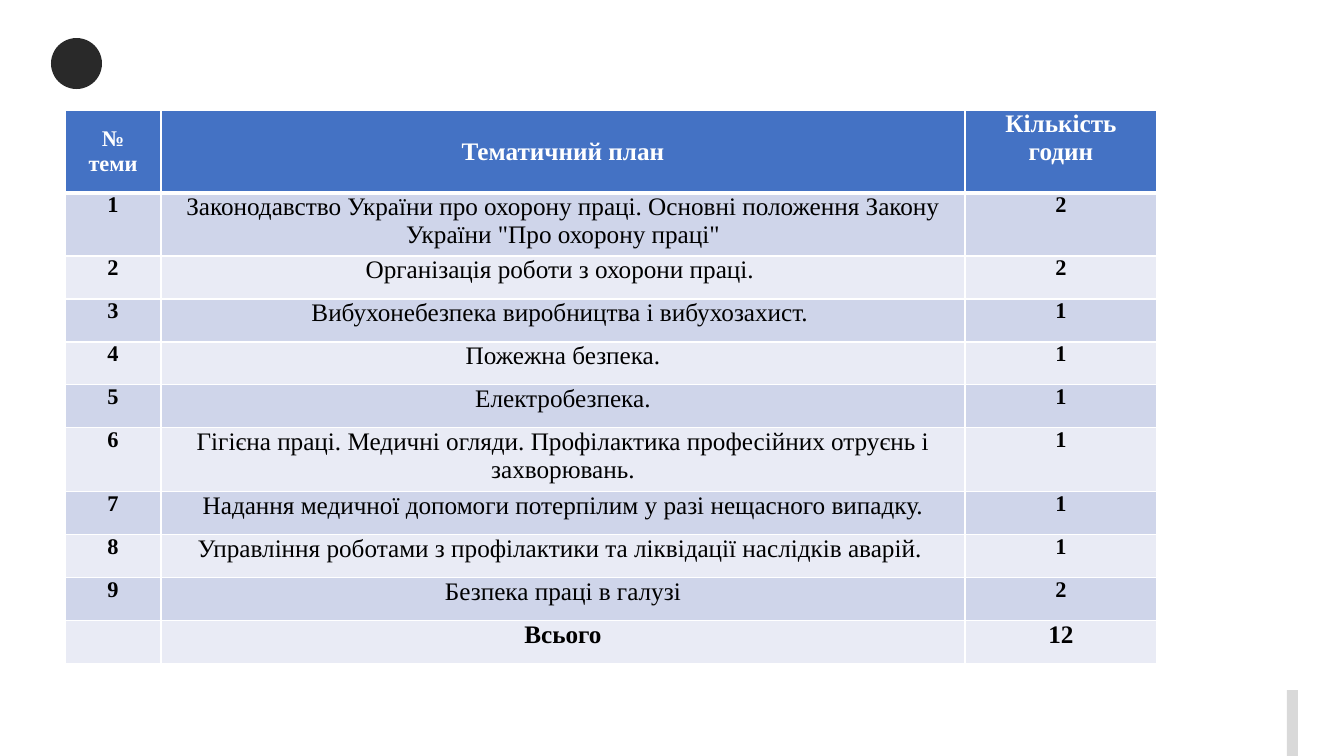
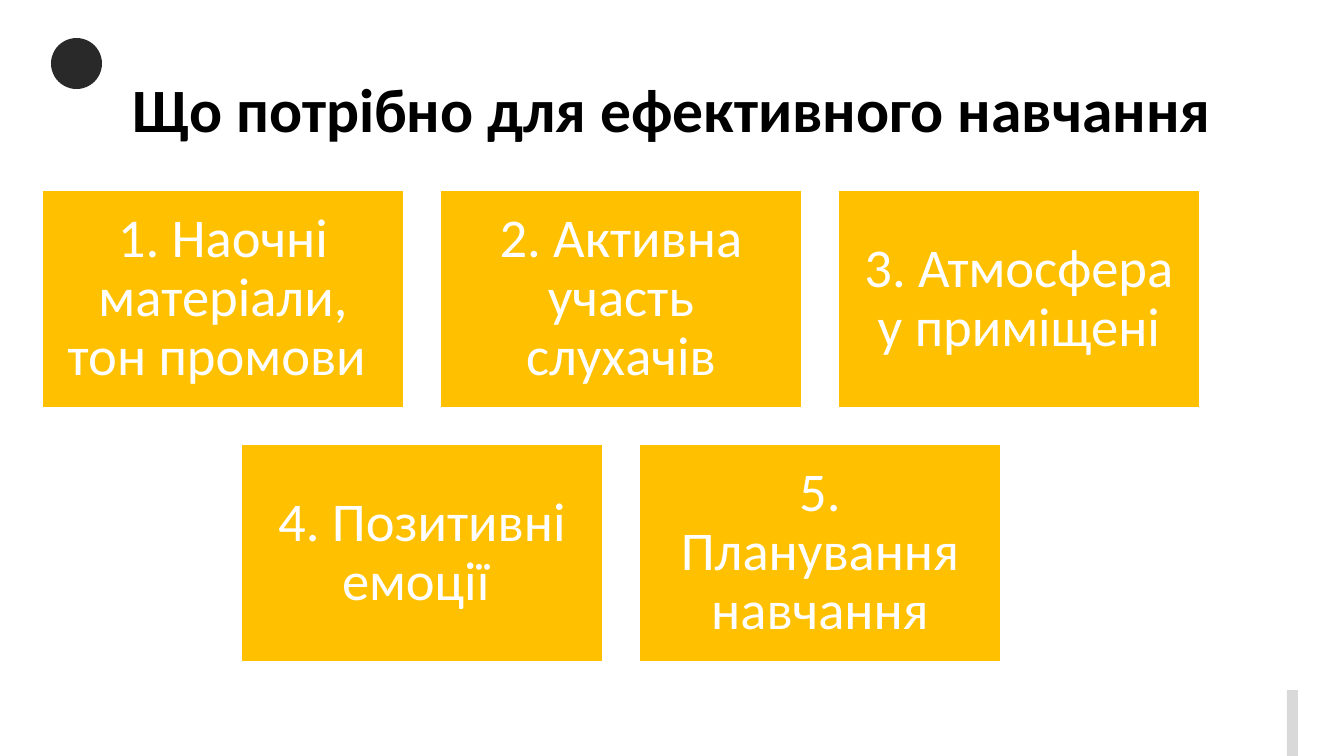
import dataclasses

import lxml.etree
import pptx
import pptx.dml.color
import pptx.enum.shapes
import pptx.enum.text
import pptx.oxml.ns
import pptx.shapes.autoshape
import pptx.slide
import pptx.table
import pptx.text.text
import pptx.util

SLIDE_W, SLIDE_H = 1344, 756
EMU_PER_PX = 12192000 / SLIDE_W
TITLE_ONLY, BLANK = 5, 6

WHITE, BLACK = "FFFFFF", "000000"
DARK, GREY = "292929", "D9D9D9"
HEADER_BLUE, BANDS = "4472C4", ("E9EBF5", "CFD5EA")
AMBER = "FFC000"
SANS, SERIF = "Calibri", "Times New Roman"

MIDDLE = pptx.enum.text.MSO_ANCHOR.MIDDLE
TOP = pptx.enum.text.MSO_ANCHOR.TOP
RECT = pptx.enum.shapes.MSO_SHAPE.RECTANGLE
OVAL = pptx.enum.shapes.MSO_SHAPE.OVAL


@dataclasses.dataclass(frozen=True)
class Box:
    x: int
    y: int
    w: int
    h: int


@dataclasses.dataclass(frozen=True)
class Topic:
    number: str
    name: str
    hours: str
    height: int = 43


TITLE_BOX = Box(93, 40, 1159, 146)
CORNER_DOT = Box(51, 38, 51, 51)
EDGE_BAR = Box(1287, 690, 11, 66)

TABLE_X, TABLE_Y, HEADER_H = 65, 110, 83
COLUMNS = (96, 804, 192)
HEADER = (
    (("№", "теми"), 16, MIDDLE),
    (("Тематичний план",), 18, MIDDLE),
    (("Кількість", "годин"), 18, TOP),
)
TOPICS = (
    Topic("1", "Законодавство України про охорону праці. Основні положення "
               "Закону України \"Про охорону праці\"", "2", 63),
    Topic("2", "Організація роботи з охорони праці. ", "2"),
    Topic("3", "Вибухонебезпека виробництва і вибухозахист. ", "1"),
    Topic("4", "Пожежна безпека.", "1"),
    Topic("5", "Електробезпека.", "1"),
    Topic("6", "Гігієна праці. Медичні огляди. Профілактика професійних "
               "отруєнь і захворювань.", "1", 64),
    Topic("7", "Надання медичної допомоги потерпілим у разі нещасного випадку.", "1"),
    Topic("8", "Управління роботами з профілактики та ліквідації наслідків аварій. ", "1"),
    Topic("9", "Безпека праці в галузі", "2"),
    Topic("", "Всього", "12"),
)

CARD_W, CARD_H, CARD_GAP = 362, 218, 36
CARDS_CENTER, CARDS_Y, CARD_INSET = 621, 190, 16
CARD_ROWS = (
    ("1. Наочні матеріали, тон промови ", "2. Активна участь слухачів",
     "3. Атмосфера у приміщені"),
    ("4. Позитивні емоції ", "5. Планування навчання"),
)


def px(n: int) -> pptx.util.Emu:
    return pptx.util.Emu(round(n * EMU_PER_PX))


def rgb(color: str) -> pptx.dml.color.RGBColor:
    return pptx.dml.color.RGBColor.from_string(color)


def write(tf: pptx.text.text.TextFrame, *lines: str, size: int, font: str,
          color: str, bold: bool = False, spacing: float = 1.0) -> None:
    for i, line in enumerate(lines):
        p = tf.add_paragraph() if i else tf.paragraphs[0]
        p.alignment = pptx.enum.text.PP_ALIGN.CENTER
        p.line_spacing = spacing
        p.space_before = pptx.util.Pt(0)
        r = p.add_run()
        r.text = line
        r.font.size = pptx.util.Pt(size)
        r.font.name = font
        r.font.bold = bold
        r.font.color.rgb = rgb(color)


def add_box(s: pptx.slide.Slide, kind: pptx.enum.shapes.MSO_SHAPE, box: Box,
            fill: str, line: str = "") -> pptx.shapes.autoshape.Shape:
    sp = s.shapes.add_shape(kind, px(box.x), px(box.y), px(box.w), px(box.h))
    sp.shadow.inherit = False
    sp.fill.solid()
    sp.fill.fore_color.rgb = rgb(fill)
    if line:
        sp.line.color.rgb = rgb(line)
        sp.line.width = pptx.util.Pt(1)
    else:
        sp.line.fill.background()
    return sp


def add_slide(prs: pptx.presentation.Presentation, layout: int,
              title: str = "") -> pptx.slide.Slide:
    s = prs.slides.add_slide(prs.slide_layouts[layout])
    add_box(s, OVAL, CORNER_DOT, DARK)
    add_box(s, RECT, EDGE_BAR, GREY)
    if title:
        sp = s.shapes.title
        sp.left, sp.top = px(TITLE_BOX.x), px(TITLE_BOX.y)
        sp.width, sp.height = px(TITLE_BOX.w), px(TITLE_BOX.h)
        tf = sp.text_frame
        tf.auto_size = pptx.enum.text.MSO_AUTO_SIZE.NONE
        tf.vertical_anchor = MIDDLE
        write(tf, title, size=44, font=SANS, color=BLACK, bold=True, spacing=0.9)
    return s


def set_borders(cell: pptx.table._Cell, top: int = 1, bottom: int = 1) -> None:
    widths = {"a:lnL": 1, "a:lnR": 1, "a:lnT": top, "a:lnB": bottom}
    tc_pr = cell._tc.get_or_add_tcPr()
    for i, (tag, width) in enumerate(widths.items()):
        ln = lxml.etree.Element(pptx.oxml.ns.qn(tag), w=str(pptx.util.Pt(width)))
        fill = lxml.etree.SubElement(ln, pptx.oxml.ns.qn("a:solidFill"))
        lxml.etree.SubElement(fill, pptx.oxml.ns.qn("a:srgbClr"), val=WHITE)
        tc_pr.insert(i, ln)


def format_cell(cell: pptx.table._Cell, fill: str,
                anchor: pptx.enum.text.MSO_ANCHOR = TOP) -> None:
    cell.margin_left = cell.margin_right = px(7)
    cell.margin_top = cell.margin_bottom = 0
    cell.vertical_anchor = anchor
    cell.fill.solid()
    cell.fill.fore_color.rgb = rgb(fill)


def plan_slide(prs: pptx.presentation.Presentation) -> None:
    s = add_slide(prs, BLANK)
    heights = (HEADER_H, *(topic.height for topic in TOPICS))
    table = s.shapes.add_table(
        len(heights), len(COLUMNS), px(TABLE_X), px(TABLE_Y),
        px(sum(COLUMNS)), px(sum(heights))).table
    for column, width in zip(table.columns, COLUMNS):
        column.width = px(width)
    for row, height in zip(table.rows, heights):
        row.height = px(height)
    for col, (lines, size, anchor) in enumerate(HEADER):
        cell = table.cell(0, col)
        format_cell(cell, HEADER_BLUE, anchor)
        set_borders(cell, bottom=3)
        write(cell.text_frame, *lines, size=size, font=SERIF, color=WHITE, bold=True)
    for row, topic in enumerate(TOPICS, 1):
        is_total = not topic.number
        for col, text in enumerate((topic.number, topic.name, topic.hours)):
            cell = table.cell(row, col)
            format_cell(cell, BANDS[row % 2])
            set_borders(cell, top=3 if row == 1 else 1)
            if text:
                write(cell.text_frame, text, size=18 if is_total or col == 1 else 16,
                      font=SERIF, color=BLACK, bold=is_total or col != 1)


def learning_slide(prs: pptx.presentation.Presentation) -> None:
    s = add_slide(prs, TITLE_ONLY, "Що потрібно для ефективного навчання")
    for row, cards in enumerate(CARD_ROWS):
        row_w = len(cards) * (CARD_W + CARD_GAP) - CARD_GAP
        left = CARDS_CENTER - row_w // 2
        y = CARDS_Y + row * (CARD_H + CARD_GAP)
        for col, text in enumerate(cards):
            box = Box(left + col * (CARD_W + CARD_GAP), y, CARD_W, CARD_H)
            tf = add_box(s, RECT, box, AMBER, line=WHITE).text_frame
            tf.word_wrap = True
            tf.vertical_anchor = MIDDLE
            tf.margin_left = tf.margin_right = px(CARD_INSET)
            tf.margin_top = tf.margin_bottom = px(CARD_INSET)
            write(tf, text, size=39, font=SANS, color=WHITE, spacing=0.9)


def main() -> None:
    prs = pptx.Presentation()
    prs.slide_width, prs.slide_height = px(SLIDE_W), px(SLIDE_H)
    plan_slide(prs)
    learning_slide(prs)
    prs.save("out.pptx")


if __name__ == "__main__":
    main()
